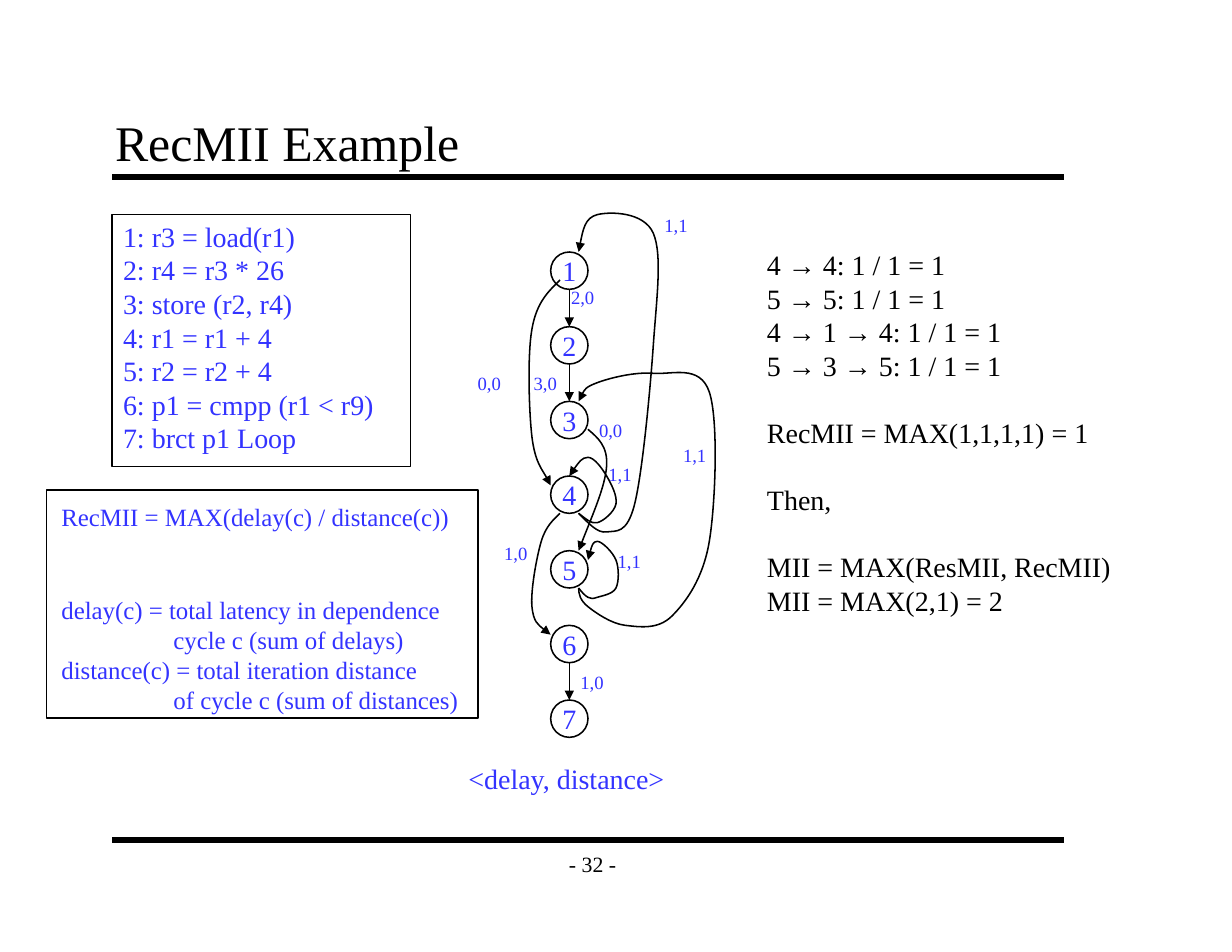
"""Build the RecMII example slide: code, dependence graph and results."""
from lxml import etree
from pptx import Presentation
from pptx.dml.color import RGBColor
from pptx.enum.shapes import MSO_CONNECTOR, MSO_SHAPE
from pptx.enum.text import MSO_ANCHOR, MSO_AUTO_SIZE, PP_ALIGN
from pptx.oxml.ns import qn
from pptx.util import Pt

LINE = MSO_CONNECTOR.STRAIGHT
RECT, OVAL = MSO_SHAPE.RECTANGLE, MSO_SHAPE.OVAL
MID, LOW = MSO_ANCHOR.MIDDLE, MSO_ANCHOR.BOTTOM
LEFT, MIDDLE = PP_ALIGN.LEFT, PP_ALIGN.CENTER
FIXED = MSO_AUTO_SIZE.NONE
COLORS = {"ink": "000000", "blue": "3333FF"}
FONT = "Times New Roman"

deck = Presentation()
deck.slide_width, deck.slide_height = Pt(792), Pt(612)
slide = deck.slides.add_slide(deck.slide_layouts[5])
shapes = slide.shapes


def write(shape, rows, size, color="blue", align=LEFT, lead=1.2):
    """Fill a shape with rows; an empty row becomes space, a break hangs."""
    frame = shape.text_frame
    frame.word_wrap = False
    frame.auto_size = FIXED
    para, gap = frame.paragraphs[0], 0
    for row in rows:
        if not row:
            gap += lead * size
            continue
        if para.runs:
            para = frame.add_paragraph()
        para.alignment = align
        para.line_spacing = Pt(lead * size)
        para.space_before, gap = Pt(gap), 0
        for i, part in enumerate(row.split("\n")):
            if i:
                para.add_line_break()
                props = para._p.get_or_add_pPr()
                props.set("marL", str(Pt(72)))
                props.set("indent", str(-Pt(72)))
            run = para.add_run()
            run.text = part
            run.font.name, run.font.size = FONT, Pt(size)
            run.font.color.rgb = RGBColor.from_string(COLORS[color])


def stroke(shape, width=1, arrow=False):
    """Give a shape or line a plain ink stroke without a shadow."""
    shape.line.color.rgb = RGBColor.from_string(COLORS["ink"])
    shape.line.width = Pt(width)
    if arrow:
        etree.SubElement(shape.line._get_or_add_ln(), qn("a:tailEnd"), type="triangle")
    etree.SubElement(shape._element.spPr, qn("a:effectLst"))


for y in (114, 540):
    stroke(shapes.add_connector(LINE, Pt(72), Pt(y), Pt(684), Pt(y)), 4)

title = shapes.title
title.left, title.top, title.width, title.height = Pt(66), Pt(66), Pt(612), Pt(48)
page = shapes.add_textbox(Pt(354), Pt(540), Pt(54), Pt(30))
for box, text, size, align, anchor in [
    (title, "RecMII Example", 32, LEFT, LOW),
    (page, "- 32 -", 14, MIDDLE, MID),
]:
    write(box, [text], size, "ink", align)
    frame = box.text_frame
    frame.vertical_anchor = anchor
    frame.margin_left = frame.margin_right = Pt(8)
    frame.margin_top = frame.margin_bottom = Pt(4)

for x, y, w, h in [(72, 138, 192, 162), (30, 315, 277.5, 146.5)]:
    panel = shapes.add_shape(RECT, Pt(x), Pt(y), Pt(w), Pt(h))
    panel.fill.background()
    stroke(panel)

code = ["1: r3 = load(r1)", "2: r4 = r3 * 26", "3: store (r2, r4)", "4: r1 = r1 + 4",
        "5: r2 = r2 + 4", "6: p1 = cmpp (r1 < r9)", "7: brct p1 Loop"]
terms = ["delay(c) = total latency in dependence\ncycle c (sum of delays)",
         "distance(c) = total iteration distance\nof cycle c (sum of distances)"]
result = ["4 → 4: 1 / 1 = 1", "5 → 5: 1 / 1 = 1", "4 → 1 → 4: 1 / 1 = 1",
          "5 → 3 → 5: 1 / 1 = 1", "", "RecMII = MAX(1,1,1,1) = 1", "", "Then,", "",
          "MII = MAX(ResMII, RecMII)", "MII = MAX(2,1) = 2"]
for x, y, w, h, rows, size, color in [
    (72, 137.5, 176, 158, code, 18, "blue"),
    (32.4, 319, 268, 27, ["RecMII = MAX(delay(c) / distance(c))"], 16, "blue"),
    (32.4, 379, 273, 85, terms, 16, "blue"),
    (294, 486, 142, 29, ["<delay, distance>"], 18, "blue"),
    (486, 155.5, 236, 245, result, 18, "ink"),
]:
    write(shapes.add_textbox(Pt(x), Pt(y), Pt(w), Pt(h)), rows, size, color)

TOP, STEP, SIZE = 162, 48, 24
for i in range(7):
    node = shapes.add_shape(OVAL, Pt(354), Pt(TOP + i * STEP), Pt(SIZE), Pt(SIZE))
    node.fill.background()
    stroke(node)
    write(node, [str(i + 1)], 18, align=MIDDLE)
    node.text_frame.vertical_anchor = MID

for i in (0, 1, 5):
    y = TOP + i * STEP + SIZE
    edge = shapes.add_connector(LINE, Pt(366), Pt(y), Pt(366), Pt(y + STEP - SIZE))
    stroke(edge, arrow=True)

curves = {
    "1 to 4": [(360, 180), (353, 187), (345, 194), (342, 211.5), (339, 228), (340, 264),
               (342, 281), (344, 297), (352, 307), (354, 312)],
    "3 to 5": [(378, 276), (384.5, 281.5), (391, 287), (390, 300), (389, 313), (380, 333),
               (372, 354)],
    "4 to 6": [(360, 330), (356, 334), (351, 338), (348, 348), (345, 358), (341, 380),
               (342, 390), (343, 400), (348.5, 404), (354, 408)],
    "4 to 1": [(372, 330), (378, 336), (384, 343), (390, 342), (396, 341), (403, 344),
               (408, 324), (413, 304), (418, 251), (420, 222), (422, 193), (426, 164),
               (420, 150), (414, 136), (392, 136), (384, 138), (376, 140), (374, 151),
               (372, 162)],
    "4 to 4": [(372, 330), (376, 333), (380, 337), (384, 336), (388, 335), (395, 329),
               (396, 324), (397, 319), (393, 311), (390, 306), (387, 301), (382, 294),
               (378, 294), (374, 294), (370, 300), (366, 306)],
    "5 to 5": [(372, 378), (373.5, 380), (376, 383), (378, 384), (380, 385), (381, 385),
               (384, 384), (387, 383), (394, 382), (396, 378), (398, 374), (398, 365),
               (396, 360), (394, 355), (387, 348), (384, 348), (381, 348), (379.5, 354),
               (378, 360)],
    "5 to 3": [(372, 378), (372, 382), (373, 386), (378, 390), (383, 394), (393, 401),
               (402, 402), (411, 403), (423, 405), (432, 396), (441, 387), (452, 372),
               (456, 348), (460, 324), (462, 270), (456, 252), (450, 234), (432, 241),
               (420, 240), (408, 239), (392, 243), (384, 246), (376, 249), (374, 253),
               (372, 258)],
}
for name, spots in curves.items():
    spots = [(Pt(x), Pt(y)) for x, y in spots]
    pen = shapes.build_freeform(*spots[0])
    pen.add_line_segments(spots[1:], close=False)
    edge = pen.convert_to_shape()
    edge.name = name
    edge.fill.background()
    stroke(edge, arrow=True)
    legs = list(edge._element.iter(qn("a:lnTo")))
    for i in range(0, len(legs), 3):
        bend = etree.SubElement(legs[i].getparent(), qn("a:cubicBezTo"))
        for leg in legs[i:i + 3]:
            bend.append(leg[0])
            leg.getparent().remove(leg)

for x, y, text in [
    (317, 345, "1,0"), (366, 428, "1,0"), (300, 235.5, "0,0"), (336, 235.5, "3,0"),
    (360, 180, "2,0"), (420, 134, "1,1"), (432, 281.5, "1,1"), (390, 350, "1,1"),
    (384, 294, "1,1"), (378, 265.5, "0,0"),
]:
    write(shapes.add_textbox(Pt(x), Pt(y), Pt(29.5), Pt(21.5)), [text], 12)

deck.save("out.pptx")
